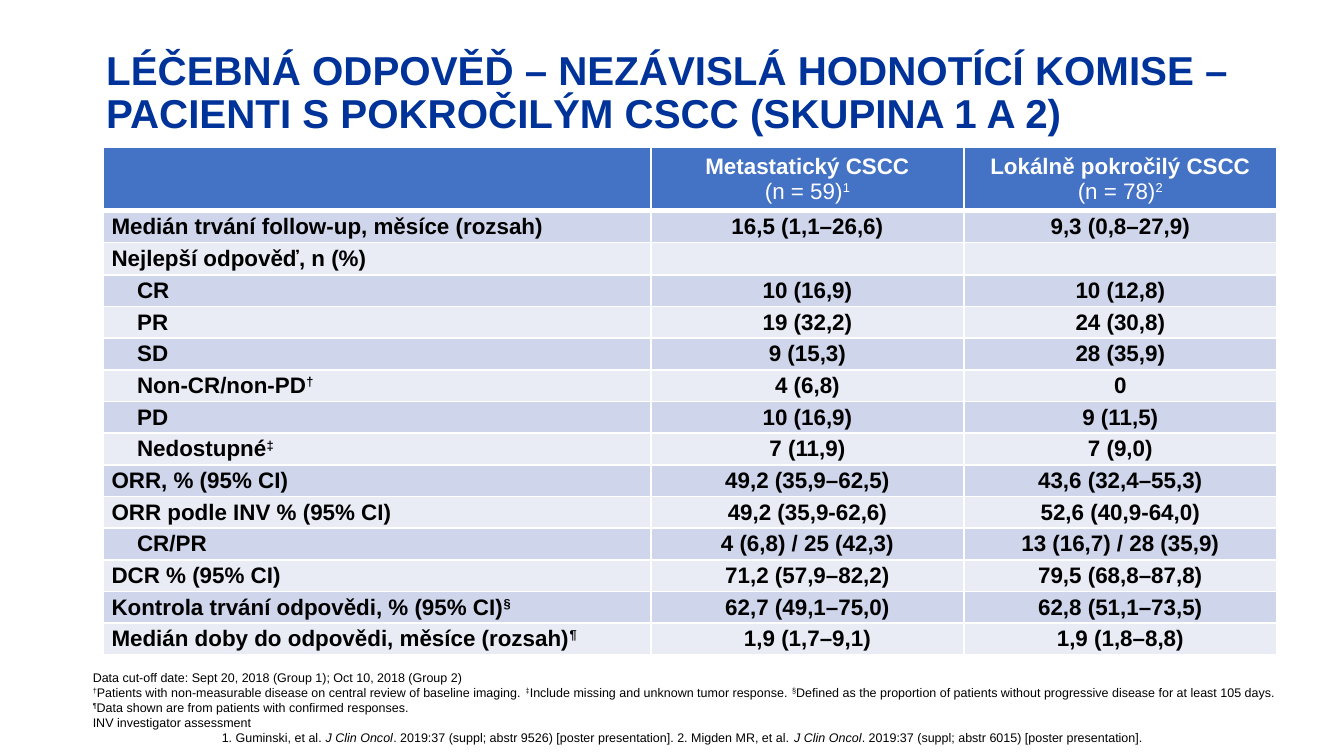
"""Build the slide on treatment response in advanced CSCC."""
import lxml.etree
import pptx
import pptx.dml.color
import pptx.enum.text
import pptx.oxml.ns
import pptx.util

RGB = pptx.dml.color.RGBColor
ALIGN = pptx.enum.text.PP_ALIGN
ANCHOR = pptx.enum.text.MSO_ANCHOR
NAVY = RGB(0x00, 0x33, 0x99)
BLUE = RGB(0x44, 0x72, 0xC4)
DARK = RGB(0xCF, 0xD5, 0xEA)
PALE = RGB(0xE9, 0xEB, 0xF5)
WHITE = RGB(0xFF, 0xFF, 0xFF)
BLACK = RGB(0x00, 0x00, 0x00)

WIDE = pptx.util.Inches(10)
HIGH = WIDE * 9 // 16
TITLE = "LÉČEBNÁ ODPOVĚĎ – NEZÁVISLÁ HODNOTÍCÍ KOMISE – PACIENTI S POKROČILÝM CSCC (SKUPINA 1 A 2)"
HEADS = [("Metastatický CSCC", "(n = 59)|1"), ("Lokálně pokročilý CSCC", "(n = 78)|2")]
ROWS = [
    (0, "Medián trvání follow-up, měsíce (rozsah)", "16,5 (1,1–26,6)", "9,3 (0,8–27,9)"),
    (0, "Nejlepší odpověď, n (%)", "", ""),
    (1, "CR", "10 (16,9)", "10 (12,8)"),
    (1, "PR", "19 (32,2)", "24 (30,8)"),
    (1, "SD", "9 (15,3)", "28 (35,9)"),
    (1, "Non-CR/non-PD|†", "4 (6,8)", "0"),
    (1, "PD", "10 (16,9)", "9 (11,5)"),
    (1, "Nedostupné|‡", "7 (11,9)", "7 (9,0)"),
    (0, "ORR, % (95% CI)", "49,2 (35,9–62,5)", "43,6 (32,4–55,3)"),
    (0, "ORR podle INV % (95% CI)", "49,2 (35,9-62,6)", "52,6 (40,9-64,0)"),
    (1, "CR/PR", "4 (6,8) / 25 (42,3)", "13 (16,7) / 28 (35,9)"),
    (0, "DCR % (95% CI)", "71,2 (57,9–82,2)", "79,5 (68,8–87,8)"),
    (0, "Kontrola trvání odpovědi, % (95% CI)|§", "62,7 (49,1–75,0)", "62,8 (51,1–73,5)"),
    (0, "Medián doby do odpovědi, měsíce (rozsah)|¶", "1,9 (1,7–9,1)", "1,9 (1,8–8,8)"),
]
NOTES = [
    "Data cut-off date: Sept 20, 2018 (Group 1); Oct 10, 2018 (Group 2)",
    "|†|Patients with non-measurable disease on central review of baseline imaging. "
    "|‡|Include missing and unknown tumor response. "
    "|§|Defined as the proportion of patients without progressive disease for at least 105 days. "
    "|¶|Data shown are from patients with confirmed responses.",
    "INV investigator assessment",
]
CITES = ("1. Guminski, et al. |J Clin Oncol|. 2019:37 (suppl; abstr 9526) [poster presentation]. "
         "2. Migden MR, et al. |J Clin Oncol|. 2019:37 (suppl; abstr 6015) [poster presentation].")


def share(left, top, width, height):
    """Turn shares of the slide into a box of lengths."""
    return [round(part * full) for part, full in
            zip((left, top, width, height), (WIDE, HIGH, WIDE, HIGH))]


def write(para, text, size, color, bold=False, slant=False):
    """Add runs, where every second part between bars is raised or slanted."""
    for num, part in enumerate(text.split("|")):
        if not part:
            continue
        run = para.add_run()
        run.text = part
        font = run.font
        font.name, font.size, font.bold = "Arial", pptx.util.Pt(size), bold
        font.color.rgb = color
        if num % 2 and slant:
            font.italic = True
        elif num % 2:
            font._element.set("baseline", "30000")


def indent(para, inches):
    """Set the left margin of a paragraph."""
    props = para._p.get_or_add_pPr()
    props.set("marL", str(pptx.util.Inches(inches)))
    props.set("indent", "0")


def edge(cell, side, points):
    """Draw one white border of a cell."""
    line = pptx.oxml.ns.qn(f"a:ln{side}")
    node = lxml.etree.SubElement(cell._tc.get_or_add_tcPr(), line, w=str(pptx.util.Pt(points)))
    fill = lxml.etree.SubElement(node, pptx.oxml.ns.qn("a:solidFill"))
    lxml.etree.SubElement(fill, pptx.oxml.ns.qn("a:srgbClr"), val=str(WHITE))


def dress(cell, row, color):
    """Give a cell its borders, fill and margins."""
    for side in "LRTB":
        thick = (row, side) in ((0, "B"), (1, "T"))
        edge(cell, side, 3 if thick else 1)
    cell.fill.solid()
    cell.fill.fore_color.rgb = color
    cell.vertical_anchor = ANCHOR.MIDDLE
    across, down = (0.06, 0.02) if row else (0.04, 0.04)
    cell.margin_left = cell.margin_right = pptx.util.Inches(across)
    cell.margin_top = cell.margin_bottom = pptx.util.Inches(down)


def add_title(slide):
    """Fill and place the title."""
    title = slide.shapes.title
    title.left, title.top, title.width, title.height = share(0.069, 0.027, 0.902, 0.194)
    frame = title.text_frame
    frame.word_wrap, frame.vertical_anchor = True, ANCHOR.MIDDLE
    para = frame.paragraphs[0]
    para.alignment, para.line_spacing = ALIGN.LEFT, 0.9
    write(para, TITLE, 21.6, NAVY, bold=True)


def add_grid(slide):
    """Add the table of responses."""
    left, top, width, height = share(0.077, 0.195, 0.873, 0.67)
    count = len(ROWS) + 1
    grid = slide.shapes.add_table(count, 3, left, top, width, height).table
    for col, part in zip(grid.columns, (7 / 15, 4 / 15, 4 / 15)):
        col.width = round(width * part)
    for num, row in enumerate(grid.rows):
        row.height = round(height / (count + 1) * (1 if num else 2))
        for cell in row.cells:
            dress(cell, num, (PALE, DARK)[num % 2] if num else BLUE)
    for col, (name, size) in enumerate(HEADS, 1):
        frame = grid.cell(0, col).text_frame
        for para, text, bold in ((frame.paragraphs[0], name, True),
                                 (frame.add_paragraph(), size, False)):
            para.alignment = ALIGN.CENTER
            write(para, text, 12, WHITE, bold)
    for num, (level, *texts) in enumerate(ROWS, 1):
        for col, text in enumerate(texts):
            para = grid.cell(num, col).text_frame.paragraphs[0]
            para.alignment = ALIGN.CENTER if col else ALIGN.LEFT
            if level and not col:
                indent(para, 0.19)
            write(para, text, 12, BLACK, bold=True)
            if not text:
                lxml.etree.SubElement(para._p, pptx.oxml.ns.qn("a:endParaRPr"), sz="1200")


def add_notes(slide):
    """Add the footnotes and the sources."""
    frame = slide.shapes.add_textbox(*share(0.069, 0.884, 0.902, 0.102)).text_frame
    frame.word_wrap, frame.vertical_anchor = True, ANCHOR.BOTTOM
    frame.margin_left = frame.margin_right = frame.margin_top = frame.margin_bottom = 0
    for num, text in enumerate(NOTES):
        para = frame.add_paragraph() if num else frame.paragraphs[0]
        write(para, text, 6.75, BLACK)
    para = frame.add_paragraph()
    indent(para, 0.96)
    write(para, CITES, 6.75, BLACK, slant=True)


def main():
    """Build and save the slide."""
    deck = pptx.Presentation()
    deck.slide_width, deck.slide_height = WIDE, HIGH
    slide = deck.slides.add_slide(deck.slide_layouts[5])
    add_title(slide)
    add_grid(slide)
    add_notes(slide)
    deck.save("out.pptx")


if __name__ == "__main__":
    main()
